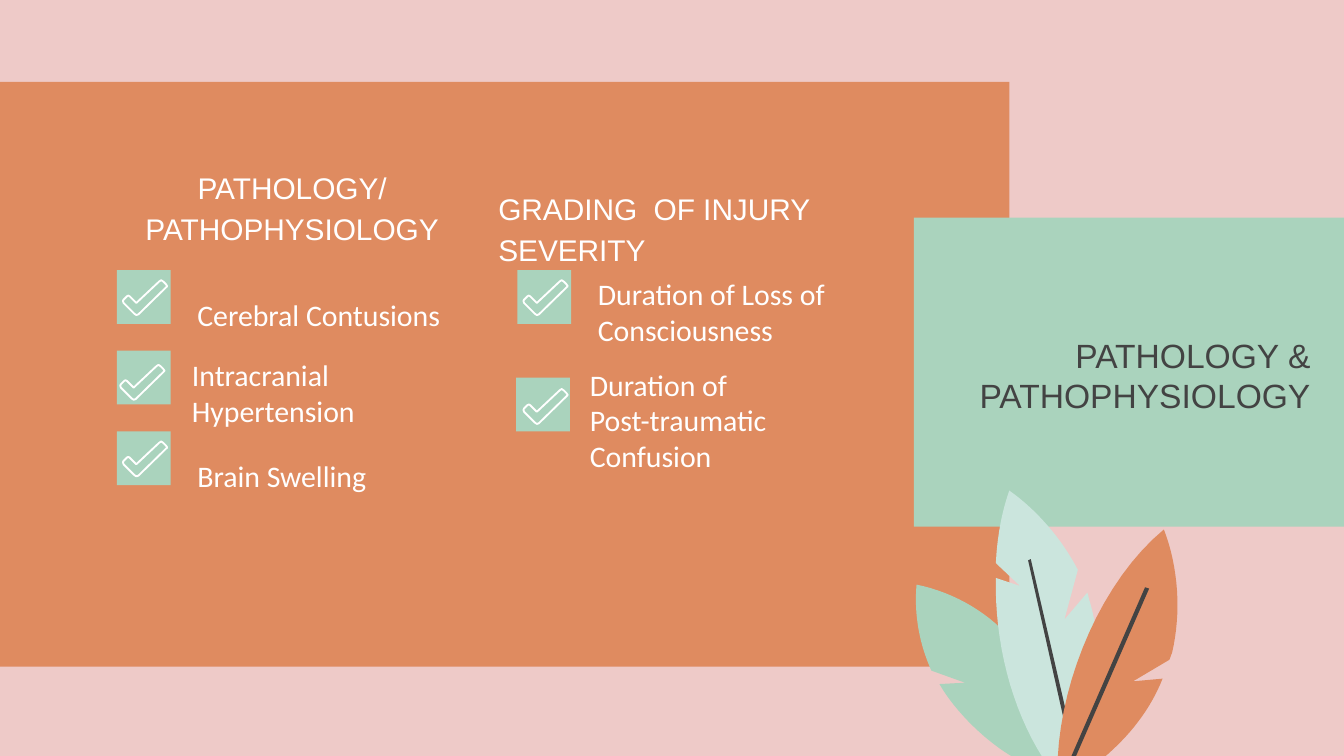
from dataclasses import dataclass

import pptx
import pptx.dml.color
import pptx.enum.text
import pptx.util

ANCHOR = pptx.enum.text.MSO_ANCHOR
ALIGN = pptx.enum.text.PP_ALIGN


@dataclass(frozen=True)
class Theme:
    pink: str = "EECAC8"
    orange: str = "DF8B60"
    green: str = "AAD3BD"
    mint: str = "CBE5DD"
    dark: str = "434343"
    white: str = "FFFFFF"
    heading_font: str = "Arial"
    body_font: str = "Calibri"
    title_size: int = 18
    text_size: int = 16
    line_width: float = 1


THEME = Theme()
CELL = pptx.util.Inches(0.1)  # a column and a row are both a tenth of an inch

# Outlines in columns and rows: pairs are corners, sixes are Bezier curves.
LEFT_LEAF = [
    (68.2, 43.5), (71.1, 44.1, 73.8, 45.7, 75.6, 48),
    (77.5, 50.3, 78.5, 53.4, 78.4, 56.4), (75.5, 56.4),
    (73.5, 55.3, 71.1, 53, 69.9, 50.9), (71.8, 50.8), (69.3, 49.9),
    (68.4, 47.9, 68, 45.7, 68.2, 43.5),
]
MIDDLE_LEAF = [
    (75.1, 36.5), (77.2, 38, 79, 40.1, 80.2, 42.4), (79.2, 46.1),
    (80.9, 44.1), (81, 44.3, 81, 44.6, 81.1, 44.8),
    (82.1, 48.2, 82, 53.1, 80.7, 56.4), (77.6, 56.4),
    (75.2, 52.6, 74, 47.7, 74.1, 43), (75.9, 43.6), (74.1, 41.9),
    (74.2, 40, 74.5, 38.2, 75.1, 36.5),
]
MIDDLE_VEIN = [(76.7, 41.6), (80.1, 56.3), (79.8, 56.4), (76.5, 41.7)]
RIGHT_LEAF = [
    (86.6, 39.4), (87.7, 42.3, 87.9, 45.6, 87.2, 48.6),
    (87.1, 48.8, 87.1, 48.9, 87, 49.1), (84.3, 50.7), (86.5, 50.5),
    (85.6, 52.8, 84, 54.8, 82.1, 56.4), (78.7, 56.4),
    (79, 50.4, 82, 43.2, 86.6, 39.4),
]
RIGHT_VEIN = [(85.2, 43.7), (85.5, 43.8), (80, 56.4), (79.7, 56.3)]
TICK = [
    (2.75, 0.15), (2.9, 0.05), (3.05, 0.15), (3.25, 0.35), (3.35, 0.5),
    (3.25, 0.6), (1.2, 2.6), (1.05, 2.65), (0.9, 2.55), (0.1, 1.75),
    (0.05, 1.6), (0.1, 1.5), (0.35, 1.25), (0.45, 1.2), (0.55, 1.25),
    (1.05, 1.75),
]

# Box corner, tick corner, text area, text, line spacing, space after
ITEMS = [
    ((8.7, 20.1), (9.1, 20.8), (13.7, 20.1, 21.8, 4),
     "Cerebral Contusions", 1.15, 16),
    ((8.7, 26.1), (8.9, 27.1), (13.3, 26.4, 24.6, 3.4),
     "Intracranial Hypertension", 1, 16),
    ((8.7, 32.1), (9.1, 32.8), (13.7, 32.1, 21.8, 4),
     "Brain Swelling", 1.15, 16),
    ((38.5, 20.1), (38.9, 20.8), (43.5, 20.1, 21.8, 4),
     "Duration of Loss of Consciousness", 1, 16),
    ((38.4, 28.1), (38.9, 28.9), (42.9, 27.4, 24.5, 5.5),
     "Duration of\vPost-traumatic Confusion", 1, 0),
]


def cells(*values):
    return [round(value * CELL) for value in values]


def color(code):
    return pptx.dml.color.RGBColor.from_string(code)


def trace(outline, steps=16):
    """Turn corners and Bezier curves into a list of points."""
    points = []
    for segment in outline:
        if len(segment) == 2:
            points.append(segment)
            continue
        controls = [points[-1], segment[:2], segment[2:4], segment[4:]]
        for step in range(1, steps + 1):
            t = step / steps
            weights = ((1 - t) ** 3, 3 * t * (1 - t) ** 2,
                       3 * t * t * (1 - t), t ** 3)
            points.append(tuple(
                sum(weight * control[axis]
                    for weight, control in zip(weights, controls))
                for axis in (0, 1)))
    return points


class Painter:
    def __init__(self, slide, theme):
        self.slide = slide
        self.theme = theme
        slide.background.fill.solid()
        slide.background.fill.fore_color.rgb = color(theme.pink)

    def paint(self, shape, fill):
        shape.shadow.inherit = False
        shape.fill.solid()
        shape.fill.fore_color.rgb = color(fill)
        shape.line.fill.background()

    def block(self, area, fill):
        shape = self.slide.shapes.add_shape(
            pptx.enum.shapes.MSO_SHAPE.RECTANGLE, *cells(*area))
        self.paint(shape, fill)

    def outline(self, shapes, points):
        points = [cells(*point) for point in points]
        builder = shapes.build_freeform(*points[0], scale=1.0)
        builder.add_line_segments(points[1:], close=True)
        return builder.convert_to_shape()

    def leaves(self, parts):
        group = self.slide.shapes.add_group_shape()
        for outline, fill in parts:
            self.paint(self.outline(group.shapes, trace(outline)), fill)

    def tick(self, left, top):
        shape = self.outline(self.slide.shapes,
                             [(left + x, top + y) for x, y in TICK])
        shape.shadow.inherit = False
        shape.fill.background()
        shape.line.color.rgb = color(self.theme.white)
        shape.line.width = pptx.util.Pt(self.theme.line_width)

    def text(self, area, text, font, size, ink, align=ALIGN.LEFT,
             anchor=ANCHOR.TOP, insets=(1, 1, 1, 1), spacing=1, after=0):
        frame = self.slide.shapes.add_textbox(*cells(*area)).text_frame
        frame.word_wrap = True
        frame.vertical_anchor = anchor
        (frame.margin_left, frame.margin_top,
         frame.margin_right, frame.margin_bottom) = cells(*insets)
        paragraph = frame.paragraphs[0]
        paragraph.text = text
        paragraph.alignment = align
        paragraph.line_spacing = spacing
        paragraph.space_after = pptx.util.Pt(after)
        paragraph.font.name = font
        paragraph.font.size = pptx.util.Pt(size)
        paragraph.font.color.rgb = color(ink)

    def title(self, area, text):
        self.text(area, text, self.theme.heading_font, self.theme.title_size,
                  self.theme.dark, ALIGN.RIGHT, ANCHOR.MIDDLE)

    def heading(self, area, text, align):
        self.text(area, text, self.theme.heading_font, self.theme.text_size,
                  self.theme.white, align, spacing=1.15, after=16)

    def item(self, box, tick, area, text, spacing, after):
        self.block((*box, 4, 4), self.theme.green)
        self.tick(*tick)
        self.text(area, text, self.theme.body_font, self.theme.text_size,
                  self.theme.white, anchor=ANCHOR.MIDDLE,
                  insets=(1, 2.2, 2, 0), spacing=spacing, after=after)


def main():
    presentation = pptx.Presentation()
    presentation.slide_width, presentation.slide_height = cells(100, 56.25)
    slide = presentation.slides.add_slide(presentation.slide_layouts[6])
    painter = Painter(slide, THEME)

    painter.block((0, 6.1, 75.1, 43.5), THEME.orange)
    painter.block((68, 16.2, 32, 23), THEME.green)
    painter.title((71.4, 24.2, 27.1, 7.4), "PATHOLOGY & PATHOPHYSIOLOGY")
    painter.heading((5.6, 11.2, 32.3, 3.4), "PATHOLOGY/ PATHOPHYSIOLOGY",
                    ALIGN.CENTER)
    painter.heading((36.1, 12.8, 30.4, 4.3), "GRADING  OF INJURY SEVERITY",
                    ALIGN.LEFT)
    for item in ITEMS:
        painter.item(*item)
    painter.leaves([
        (LEFT_LEAF, THEME.green),
        (MIDDLE_LEAF, THEME.mint),
        (MIDDLE_VEIN, THEME.dark),
        (RIGHT_LEAF, THEME.orange),
        (RIGHT_VEIN, THEME.dark),
    ])
    presentation.save("out.pptx")


if __name__ == "__main__":
    main()
